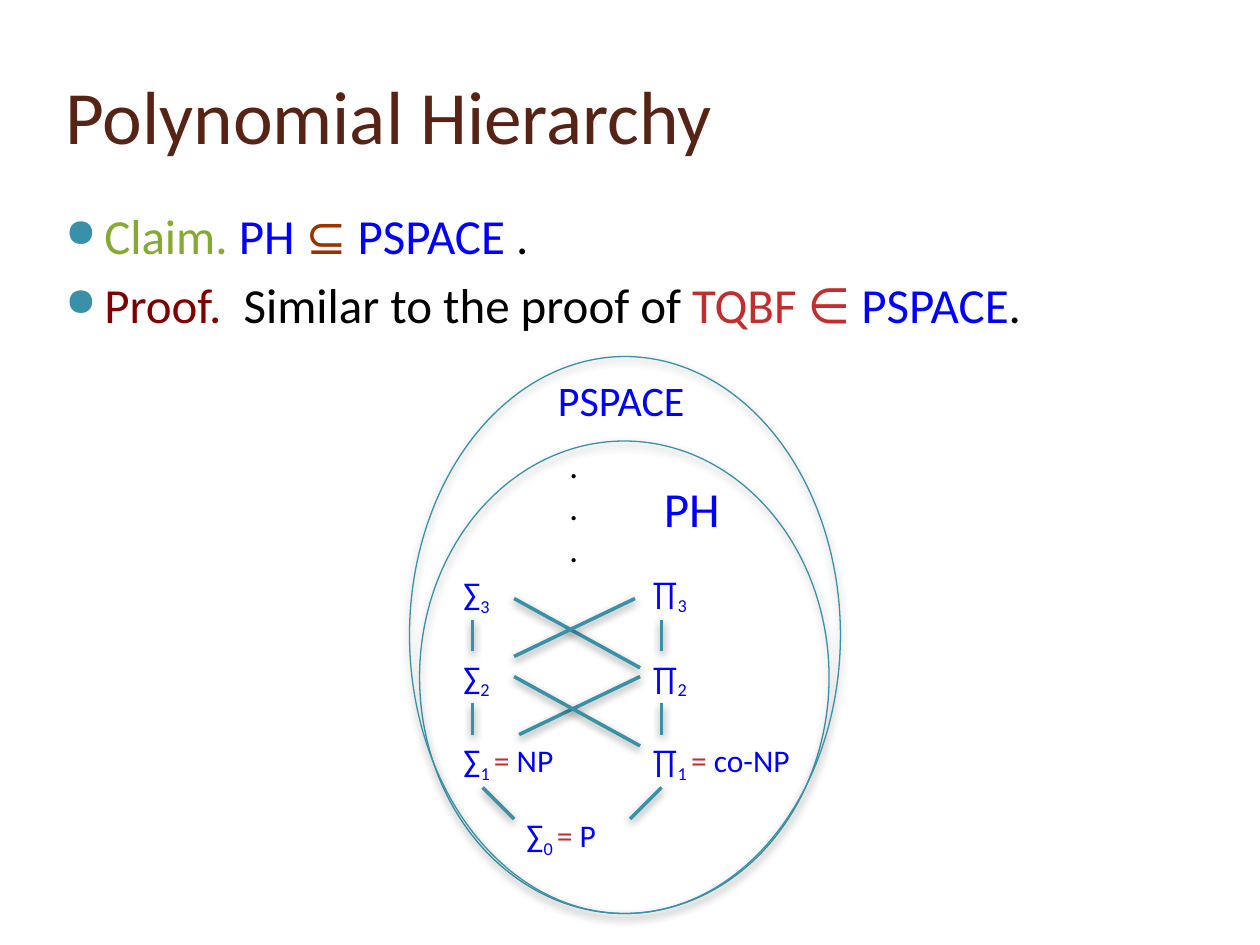
"""Build a slide that places the polynomial hierarchy inside PSPACE."""
from dataclasses import dataclass

from lxml import etree
from pptx import Presentation
from pptx.dml.color import RGBColor
from pptx.enum.shapes import MSO_CONNECTOR, MSO_SHAPE
from pptx.enum.text import MSO_ANCHOR, MSO_AUTO_SIZE, PP_ALIGN
from pptx.oxml import parse_xml
from pptx.oxml.ns import nsdecls, qn
from pptx.slide import Slide
from pptx.util import Inches, Pt

STRAIGHT = MSO_CONNECTOR.STRAIGHT
OVAL = MSO_SHAPE.OVAL
TOP, MIDDLE = MSO_ANCHOR.TOP, MSO_ANCHOR.MIDDLE
GROW = MSO_AUTO_SIZE.SHAPE_TO_FIT_TEXT
LEFT, JUSTIFY = PP_ALIGN.LEFT, PP_ALIGN.JUSTIFY

FONT = "Calibri"
BROWN = RGBColor(0x57, 0x23, 0x14)
GREEN = RGBColor(0x84, 0xAA, 0x33)
BLUE = RGBColor(0x00, 0x00, 0xFF)
RUST = RGBColor(0x99, 0x33, 0x00)
MAROON = RGBColor(0x80, 0x00, 0x00)
RED = RGBColor(0xC3, 0x2D, 0x2E)
BLACK = RGBColor(0x00, 0x00, 0x00)
TEAL = RGBColor(0x38, 0x91, 0xA7)


@dataclass(frozen=True)
class Box:
    left: float
    top: float
    width: float
    height: float

    def lengths(self) -> list[Inches]:
        return [Inches(v) for v in (self.left, self.top, self.width, self.height)]


@dataclass(frozen=True)
class Phrase:
    text: str
    color: RGBColor = BLUE
    subscript: bool = False


@dataclass(frozen=True)
class HierarchyClass:
    symbol: str
    level: int
    box: Box
    equals: str = ""

    def phrases(self) -> list[Phrase]:
        if not self.equals:
            return [Phrase(self.symbol), Phrase(str(self.level), subscript=True)]
        return [Phrase(self.symbol), Phrase(f"{self.level} ", subscript=True),
                Phrase("= ", RED), Phrase(self.equals)]


@dataclass(frozen=True)
class Link:
    x1: float
    y1: float
    x2: float
    y2: float


CLAIM = [Phrase("Claim. ", GREEN), Phrase("PH "), Phrase("⊆ ", RUST),
         Phrase("PSPACE "), Phrase(".", BLACK)]
PROOF = [Phrase("Proof.  ", MAROON), Phrase("Similar to the proof of ", BLACK),
         Phrase("TQBF ∈ ", RED), Phrase("PSPACE"), Phrase(".", BLACK)]

CLASSES = [
    HierarchyClass("∑", 0, Box(4.08, 6.43, 1.08, 0.4), "P"),
    HierarchyClass("∑", 1, Box(3.58, 5.83, 1.08, 0.4), "NP"),
    HierarchyClass("∑", 2, Box(3.58, 5.17, 0.5, 0.4)),
    HierarchyClass("∑", 3, Box(3.58, 4.51, 0.5, 0.4)),
    HierarchyClass("∏", 1, Box(5.08, 5.83, 1.5, 0.4), "co-NP"),
    HierarchyClass("∏", 2, Box(5.08, 5.17, 0.5, 0.4)),
    HierarchyClass("∏", 3, Box(5.08, 4.5, 0.5, 0.4)),
]

VERTICAL_LINKS = [Link(x, y, x, y - 0.25) for x in (3.75, 5.25) for y in (5.83, 5.17)]
BASE_LINKS = [Link(4.08, 6.5, 3.83, 6.25), Link(5, 6.5, 5.25, 6.25)]
CROSS_LINKS = [Link(4.12, 5.83, 5.08, 5.37), Link(4.08, 5.37, 5.08, 5.92),
               Link(4.08, 4.75, 5.08, 5.3), Link(4.08, 5.21, 5.04, 4.75)]

PH_REGION = Box(3.33, 3.5, 3.25, 3.75)
PSPACE_REGION = Box(3.25, 2.83, 3.42, 4.42)


def add_bullet(properties: etree._Element) -> None:
    properties.set("marL", str(Inches(0.4)))
    properties.set("indent", str(Inches(-0.31)))
    color = etree.SubElement(properties, qn("a:buClr"))
    etree.SubElement(color, qn("a:srgbClr"), val=str(TEAL))
    etree.SubElement(properties, qn("a:buSzPct"), val="80000")
    etree.SubElement(properties, qn("a:buChar"), char="●")


def add_text(slide: Slide, box: Box, paragraphs: list[list[Phrase]], *, size: float,
             anchor: MSO_ANCHOR = TOP, align: PP_ALIGN = LEFT,
             space_before: float = 0, bulleted: bool = False, grow: bool = True) -> None:
    frame = slide.shapes.add_textbox(*box.lengths()).text_frame
    frame.word_wrap = True
    frame.vertical_anchor = anchor
    if grow:
        frame.auto_size = GROW
    for index, phrases in enumerate(paragraphs):
        paragraph = frame.add_paragraph() if index else frame.paragraphs[0]
        paragraph.alignment = align
        paragraph.space_before = Pt(space_before)
        if bulleted:
            add_bullet(paragraph._p.get_or_add_pPr())
        for phrase in phrases:
            run = paragraph.add_run()
            run.text = phrase.text
            run.font.name = FONT
            run.font.size = Pt(size)
            run.font.color.rgb = phrase.color
            if phrase.subscript:
                run._r.get_or_add_rPr().set("baseline", "-25000")


def add_shadow(properties: etree._Element) -> None:
    properties.append(parse_xml(
        f'<a:effectLst {nsdecls("a")}>'
        f'<a:outerShdw blurRad="{Pt(5)}" dist="{Pt(2)}" dir="5400000" rotWithShape="0">'
        '<a:srgbClr val="000000"><a:alpha val="43000"/></a:srgbClr>'
        '</a:outerShdw></a:effectLst>'))


def add_link(slide: Slide, link: Link) -> None:
    ends = [Inches(v) for v in (link.x1, link.y1, link.x2, link.y2)]
    connector = slide.shapes.add_connector(STRAIGHT, *ends)
    connector.line.color.rgb = TEAL
    connector.line.width = Pt(2)
    add_shadow(connector._element.spPr)


def add_region(slide: Slide, box: Box) -> None:
    region = slide.shapes.add_shape(OVAL, *box.lengths())
    region.fill.background()
    region.line.color.rgb = TEAL
    region.line.width = Pt(0.75)
    add_shadow(region._element.spPr)


def main() -> None:
    presentation = Presentation()
    presentation.slide_width = Inches(10)
    presentation.slide_height = Inches(7.5)
    slide = presentation.slides.add_slide(presentation.slide_layouts[6])

    add_text(slide, Box(0.42, 0.33, 8.83, 1.15), [[Phrase("Polynomial Hierarchy", BROWN)]],
             size=43, anchor=MIDDLE, grow=False)
    add_text(slide, Box(0.33, 1.58, 9.17, 5.83), [CLAIM, PROOF], size=28, align=JUSTIFY,
             space_before=6, bulleted=True, grow=False)
    for hierarchy_class in CLASSES:
        add_text(slide, hierarchy_class.box, [hierarchy_class.phrases()], size=18)
    add_text(slide, Box(4.42, 3.47, 0.67, 1.11), [[Phrase(".", BLACK)]] * 3, size=20)
    for link in VERTICAL_LINKS + BASE_LINKS + CROSS_LINKS:
        add_link(slide, link)
    add_text(slide, Box(5.17, 3.75, 1.5, 0.57), [[Phrase("PH")]], size=28)
    for region in (PH_REGION, PSPACE_REGION):
        add_region(slide, region)
    add_text(slide, Box(4.33, 2.92, 1.58, 0.5), [[Phrase("PSPACE")]], size=24)

    presentation.save("out.pptx")


if __name__ == "__main__":
    main()
